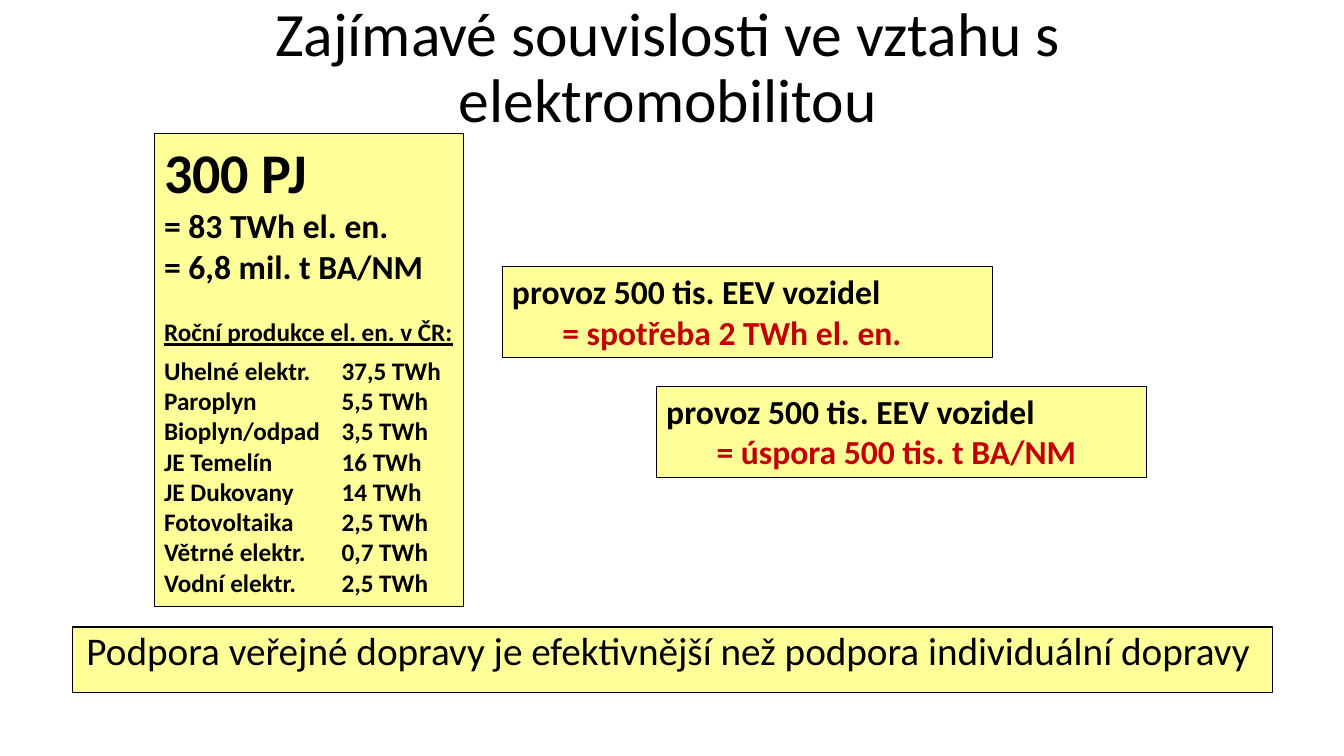
from lxml import etree
from pptx import Presentation, util as u
from pptx.dml.color import RGBColor
from pptx.enum import text
from pptx.oxml.ns import qn

COLORS = {"ink": "000000", "panel": "FFFF99", "accent": "C00000"}
PRODUCTION = [
    ("Uhelné elektr.", "37,5 TWh"),
    ("Paroplyn", "5,5 TWh"),
    ("Bioplyn/odpad", "3,5 TWh"),
    ("JE Temelín", "16 TWh"),
    ("JE Dukovany", "14 TWh"),
    ("Fotovoltaika", "2,5 TWh"),
    ("Větrné elektr.", "0,7 TWh"),
    ("Vodní elektr.", "2,5 TWh"),
]
COMPARISONS = [
    (4.98, 2.64, "= spotřeba 2 TWh el. en."),
    (6.51, 3.83, "= úspora 500 tis. t BA/NM"),
]


class EnergySlide:
    """Style and drawing methods for the electromobility slide."""

    def __init__(self, presentation):
        self.font = "Calibri"
        self.slide = presentation.slides.add_slide(presentation.slide_layouts[5])

    def run(self, paragraph, wording, size, bold=True, color="ink", underline=False):
        run = paragraph.add_run()
        run.text = wording
        font = run.font
        font.name, font.size, font.bold = self.font, u.Pt(size), bold
        font.underline = underline
        font.color.rgb = RGBColor.from_string(COLORS[color])

    def line(self, frame, wording, size, **style):
        first = frame.paragraphs[0]
        paragraph = frame.add_paragraph() if first.runs else first
        self.run(paragraph, wording, size, **style)
        return paragraph

    def centered(self, frame, wording, size):
        paragraph = self.line(frame, wording, size, bold=False)
        paragraph.alignment = text.PP_ALIGN.CENTER
        paragraph.line_spacing = 0.9

    def title(self, wording, left, top, width, height):
        shape = self.slide.shapes.title
        shape.left, shape.top = u.Inches(left), u.Inches(top)
        shape.width, shape.height = u.Inches(width), u.Inches(height)
        frame = shape.text_frame
        frame.word_wrap = True
        frame.auto_size = text.MSO_AUTO_SIZE.NONE
        frame.vertical_anchor = text.MSO_ANCHOR.MIDDLE
        self.centered(frame, wording, 44)

    def panel(self, left, top, width, height):
        shape = self.slide.shapes.add_textbox(*map(u.Inches, (left, top, width, height)))
        shape.fill.solid()
        shape.fill.fore_color.rgb = RGBColor.from_string(COLORS["panel"])
        shape.line.color.rgb = RGBColor.from_string(COLORS["ink"])
        shape.line.width = u.Pt(0.75)
        shape.text_frame.word_wrap = True
        return shape.text_frame

    def comparison(self, left, top, result):
        frame = self.panel(left, top, 4.86, 0.91)
        self.line(frame, "provoz 500 tis. EEV vozidel", 24)
        paragraph = self.line(frame, "\t", 24)
        self.run(paragraph, result, 24, color="accent")

    def production(self, left, top, width, height):
        frame = self.panel(left, top, width, height)
        self.line(frame, "300 PJ", 40)
        self.line(frame, "= 83 TWh el. en.", 24)
        self.line(frame, "= 6,8 mil. t BA/NM", 24)
        heading = self.line(frame, "Roční produkce el. en. v ČR:", 18, underline=True)
        heading.space_before, heading.space_after = u.Pt(22), u.Pt(6)
        for source, amount in PRODUCTION:
            self.tab_stop(self.line(frame, f"{source}\t{amount}", 18), 1.76)

    def tab_stop(self, paragraph, position):
        properties = paragraph._p.get_or_add_pPr()
        stops = etree.SubElement(properties, qn("a:tabLst"))
        etree.SubElement(stops, qn("a:tab"), pos=str(u.Inches(position)), algn="l")


def main():
    presentation = Presentation()
    presentation.slide_width = u.Inches(13.33)
    presentation.slide_height = u.Inches(7.5)
    slide = EnergySlide(presentation)
    slide.title("Zajímavé souvislosti ve vztahu s elektromobilitou", 0.52, 0.27, 12.21, 0.84)
    conclusion = slide.panel(0.72, 6.22, 11.9, 0.65)
    slide.centered(
        conclusion, "Podpora veřejné dopravy je efektivnější než podpora individuální dopravy ", 28
    )
    for left, top, result in COMPARISONS:
        slide.comparison(left, top, result)
    slide.production(1.53, 1.32, 3.07, 4.7)
    presentation.save("out.pptx")


if __name__ == "__main__":
    main()
